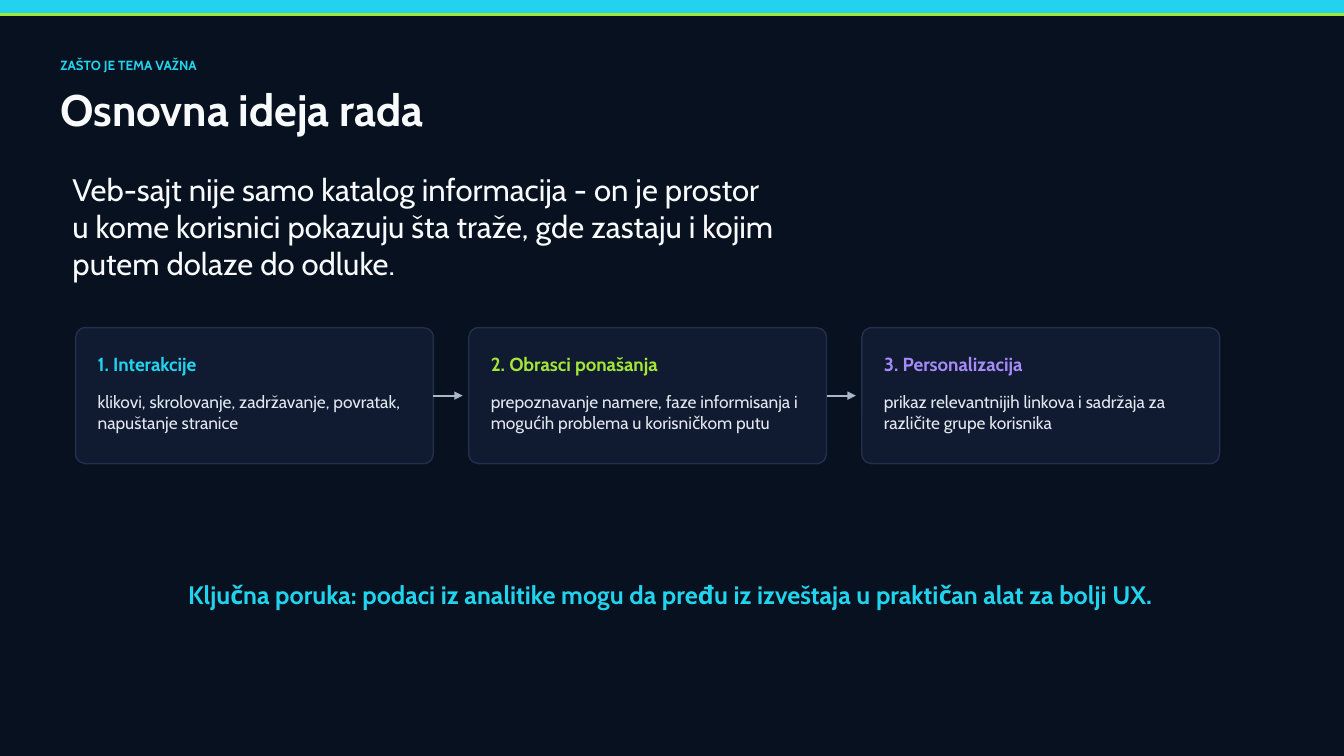
from lxml.etree import SubElement as Sub
from pptx import Presentation
from pptx.dml.color import RGBColor
from pptx.enum.shapes import MSO_CONNECTOR as Link, MSO_SHAPE as Form
from pptx.enum.text import MSO_ANCHOR as Anchor, PP_ALIGN as Align
from pptx.oxml.ns import qn
from pptx.util import Pt

NIGHT = RGBColor(0x07, 0x11, 0x1F)
PANEL = RGBColor(0x10, 0x1B, 0x31)
EDGE = RGBColor(0x23, 0x30, 0x4D)
CYAN = RGBColor(0x22, 0xD3, 0xEE)
LIME = RGBColor(0xA3, 0xE6, 0x35)
VIOLET = RGBColor(0xA7, 0x8B, 0xFA)
WHITE = RGBColor(0xF8, 0xFA, 0xFC)
MIST = RGBColor(0xE2, 0xE8, 0xF0)
STEEL = RGBColor(0xAA, 0xB7, 0xC8)

STEPS = [
    ("1. Interakcije", CYAN,
     "klikovi, skrolovanje, zadržavanje, povratak, napuštanje stranice"),
    ("2. Obrasci ponašanja", LIME,
     "prepoznavanje namere, faze informisanja i mogućih problema u korisničkom putu"),
    ("3. Personalizacija", VIOLET,
     "prikaz relevantnijih linkova i sadržaja za različite grupe korisnika"),
]


class Deck:
    font = "Cabin"
    frame = dict(word_wrap=True, margin_left=0, margin_right=0,
                 margin_top=0, margin_bottom=0)

    def __init__(self, slide):
        self.slide = slide
        fill = slide.background.fill
        fill.solid()
        fill.fore_color.rgb = NIGHT

    def style(self, item, values):
        for name, value in values.items():
            setattr(item, name, value)

    def shape(self, form, box, color, edge=None):
        shape = self.slide.shapes.add_shape(form, *map(Pt, box))
        shape.shadow.inherit = False
        shape.fill.solid()
        shape.fill.fore_color.rgb = color
        if edge is None:
            shape.line.fill.background()
        else:
            shape.line.color.rgb = edge
            shape.line.width = Pt(1)
        return shape

    def card(self, box):
        card = self.shape(Form.ROUNDED_RECTANGLE, box, PANEL, EDGE)
        card.adjustments[0] = 0.074
        return card

    def text(self, words, box, size, color, bold=False,
             anchor=Anchor.MIDDLE, align=Align.LEFT):
        frame = self.slide.shapes.add_textbox(*map(Pt, box)).text_frame
        self.style(frame, dict(self.frame, vertical_anchor=anchor))
        line = frame.paragraphs[0]
        line.alignment = align
        run = line.add_run()
        run.text = words
        self.style(run.font, dict(name=self.font, size=Pt(size), bold=bold))
        run.font.color.rgb = color

    def arrow(self, card, span):
        start = card.left + card.width
        mid = card.top + card.height // 2
        arrow = self.slide.shapes.add_connector(
            Link.STRAIGHT, start, mid, start + Pt(span), mid)
        arrow.begin_connect(card, 3)
        arrow.line.color.rgb = STEEL
        arrow.line.width = Pt(1.3)
        Sub(arrow.line._get_or_add_ln(), qn("a:tailEnd"), type="triangle")
        Sub(arrow._element.spPr, qn("a:effectLst"))


def main():
    show = Presentation()
    show.slide_width, show.slide_height = Pt(960), Pt(540)
    deck = Deck(show.slides.add_slide(show.slide_layouts[6]))

    deck.shape(Form.RECTANGLE, (0, 0, 960, 9.4), CYAN)
    deck.shape(Form.RECTANGLE, (0, 9.4, 960, 2), LIME)
    deck.text("ZAŠTO JE TEMA VAŽNA", (43.2, 37.4, 482.4, 18.7), 9.5, CYAN, True)
    deck.text("Osnovna ideja rada", (43.2, 60.5, 568.8, 34.6), 31.5, WHITE, True)
    deck.text("Veb-sajt nije samo katalog informacija - on je prostor u kome "
              "korisnici pokazuju šta traže, gde zastaju i kojim putem dolaze "
              "do odluke.", (51.8, 123.8, 504, 75.6), 22.2, WHITE)

    cards = []
    for i, (title, color, body) in enumerate(STEPS):
        left = 54 + i * 280.8
        cards.append(deck.card((left, 234, 255.6, 97.2)))
        deck.text(title, (left + 15.8, 248.4, 224, 23), 13.5, color, True)
        deck.text(body, (left + 15.8, 279.4, 224, 43.2), 12.4, MIST,
                  anchor=Anchor.TOP)
    for card in cards[:-1]:
        deck.arrow(card, 20.9)

    deck.text("Ključna poruka: podaci iz analitike mogu da pređu iz izveštaja "
              "u praktičan alat za bolji UX.", (57.6, 404.6, 842.4, 39.6),
              18, CYAN, True, align=Align.CENTER)
    show.save("out.pptx")


if __name__ == "__main__":
    main()
